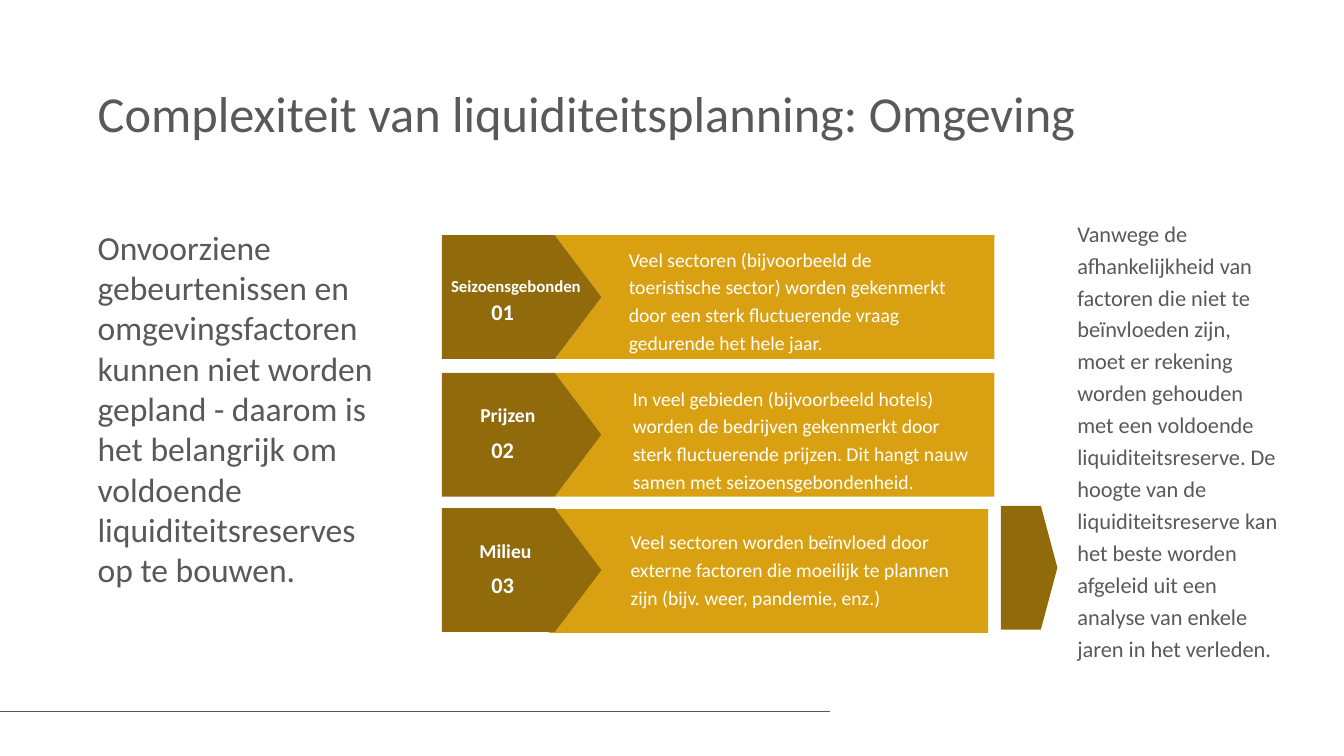
from dataclasses import dataclass

from lxml.etree import SubElement
from pptx import Presentation
from pptx.dml.color import RGBColor
from pptx.enum.shapes import MSO_CONNECTOR
from pptx.enum.text import MSO_ANCHOR, MSO_AUTO_SIZE, PP_ALIGN
from pptx.oxml.ns import qn
from pptx.util import Pt


@dataclass(frozen=True)
class Theme:
    font: str = "Calibri"
    grey: RGBColor = RGBColor(0x59, 0x59, 0x59)
    white: RGBColor = RGBColor(0xFF, 0xFF, 0xFF)
    gold: RGBColor = RGBColor(0xD9, 0xA0, 0x12)
    brown: RGBColor = RGBColor(0x91, 0x6A, 0x0C)
    title: int = 36
    lead: int = 24
    note: int = 16
    body: int = 14
    small: int = 12
    spacing: float = 1.19


THEME = Theme()


@dataclass(frozen=True)
class Factor:
    top: float
    label: str
    label_size: int
    label_centre: float
    label_top: float
    text: str
    text_left: float
    text_top: float
    text_width: float
    panel_shift: tuple = (0, 0)


FACTORS = [
    Factor(168, "Seizoensgebonden", THEME.small, 53, 25.7,
           "Veel sectoren (bijvoorbeeld de toeristische sector) worden gekenmerkt "
           "door een sterk fluctuerende vraag gedurende het hele jaar.",
           126.5, 2, 243.4),
    Factor(266.3, "Prijzen", THEME.body, 47.2, 18,
           "In veel gebieden (bijvoorbeeld hotels) worden de bedrijven gekenmerkt door "
           "sterk fluctuerende prijzen. Dit hangt nauw samen met seizoensgebondenheid.",
           129.3, 3, 258.5),
    Factor(363, "Milieu", THEME.body, 45.5, 18.6,
           "Veel sectoren worden beïnvloed door externe factoren die moeilijk te "
           "plannen zijn (bijv. weer, pandemie, enz.)",
           127.7, 8.5, 243.4, (-4.5, 0.7)),
]


def set_font(para, size, colour, bold=False):
    para.font.name = THEME.font
    para.font.size = Pt(size)
    para.font.color.rgb = colour
    para.font.bold = bold


def add_text(page, box, text, size, colour, bold=False,
             align=PP_ALIGN.LEFT, spacing=None, tight=False):
    left, top, width, height = box
    frame = page.shapes.add_textbox(Pt(left), Pt(top), Pt(width), Pt(height)).text_frame
    frame.word_wrap = True
    if tight:
        frame.margin_left = frame.margin_right = 0
        frame.margin_top = frame.margin_bottom = 0
        frame.vertical_anchor = MSO_ANCHOR.MIDDLE
    para = frame.paragraphs[0]
    para.text = text
    para.alignment = align
    if spacing:
        para.line_spacing = spacing
    set_font(para, size, colour, bold)


def add_outline(page, points, colour):
    corners = [(Pt(x), Pt(y)) for x, y in points]
    builder = page.shapes.build_freeform(*corners[0])
    builder.add_line_segments(corners[1:], close=True)
    shape = builder.convert_to_shape()
    shape.shadow.inherit = False
    shape.fill.solid()
    shape.fill.fore_color.rgb = colour
    shape.line.fill.background()


def add_pointer(page, box, shoulder):
    left, top, width, height = box
    bottom = top + height
    add_outline(page, [(left + shoulder, bottom), (left, bottom), (left, top),
                       (left + shoulder, top), (left + width, top + height / 2)],
                THEME.brown)


def add_panel(page, box, notch):
    left, top, width, height = box
    right, bottom = left + width, top + height
    add_outline(page, [(left, top), (left + notch, top + height / 2), (left, bottom),
                       (right, bottom), (right, top)], THEME.gold)


def add_title(page, box):
    title = page.shapes.title
    title.left, title.top, title.width, title.height = map(Pt, box)
    frame = title.text_frame
    frame.word_wrap = True
    frame.auto_size = MSO_AUTO_SIZE.NONE
    frame.vertical_anchor = MSO_ANCHOR.TOP
    para = frame.paragraphs[0]
    para.text = "Complexiteit van liquiditeitsplanning: Omgeving"
    para.alignment = PP_ALIGN.LEFT
    para.line_spacing = 0.9
    set_font(para, THEME.title, THEME.grey)


def add_factor(page, box, number, factor):
    left, top, width, height = box
    shoulder, tip, label_width = 80.7, 114, 124
    shift_x, shift_y = factor.panel_shift
    add_panel(page, (left + shoulder + shift_x, top + shift_y, width - shoulder, height),
              tip - shoulder)
    add_pointer(page, (left, top, tip, height), shoulder)
    add_text(page, (left + factor.label_centre - label_width / 2, top + factor.label_top,
                    label_width, 24),
             factor.label, factor.label_size, THEME.white, True, PP_ALIGN.CENTER)
    add_text(page, (left + 34, top + 45, 19, 19.5), f"{number:02}",
             THEME.note, THEME.white, True, PP_ALIGN.CENTER, tight=True)
    add_text(page, (left + factor.text_left, top + factor.text_top, factor.text_width, height),
             factor.text, THEME.body, THEME.white, spacing=THEME.spacing)


def add_lead(page, box):
    add_text(page, box,
             "Onvoorziene gebeurtenissen en omgevingsfactoren kunnen niet worden gepland - "
             "daarom is het belangrijk om voldoende liquiditeitsreserves op te bouwen.",
             THEME.lead, THEME.grey)


def add_conclusion(page, box):
    left, top, width, height = box
    add_pointer(page, (left, top + 211.5, 40.3, 88.4), 28.5)
    add_text(page, (left + 47.5, top, width - 47.5, height),
             "Vanwege de afhankelijkheid van factoren die niet te beïnvloeden zijn, moet er "
             "rekening worden gehouden met een voldoende liquiditeitsreserve. De hoogte van de "
             "liquiditeitsreserve kan het beste worden afgeleid uit een analyse van enkele "
             "jaren in het verleden.",
             THEME.note, THEME.grey, spacing=THEME.spacing)


def add_footer_line(page, box):
    left, top, width, height = box
    rule = page.shapes.add_connector(MSO_CONNECTOR.STRAIGHT, Pt(left), Pt(top),
                                     Pt(left + width), Pt(top + height))
    rule.line.color.rgb = THEME.grey
    rule.line.width = Pt(1)
    SubElement(rule._element.spPr, qn("a:effectLst"))


def main():
    deck = Presentation()
    deck.slide_width, deck.slide_height = Pt(960), Pt(540)
    page = deck.slides.add_slide(deck.slide_layouts[5])
    add_footer_line(page, (0, 508.3, 593, 0))
    add_title(page, (62.6, 59.8, 836, 63.4))
    add_lead(page, (62.6, 158.4, 222.5, 269.3))
    for number, factor in enumerate(FACTORS, 1):
        add_factor(page, (315.6, factor.top, 394.7, 88.4), number, factor)
    add_conclusion(page, (715, 149.8, 208, 330.5))
    deck.save("out.pptx")


if __name__ == "__main__":
    main()
